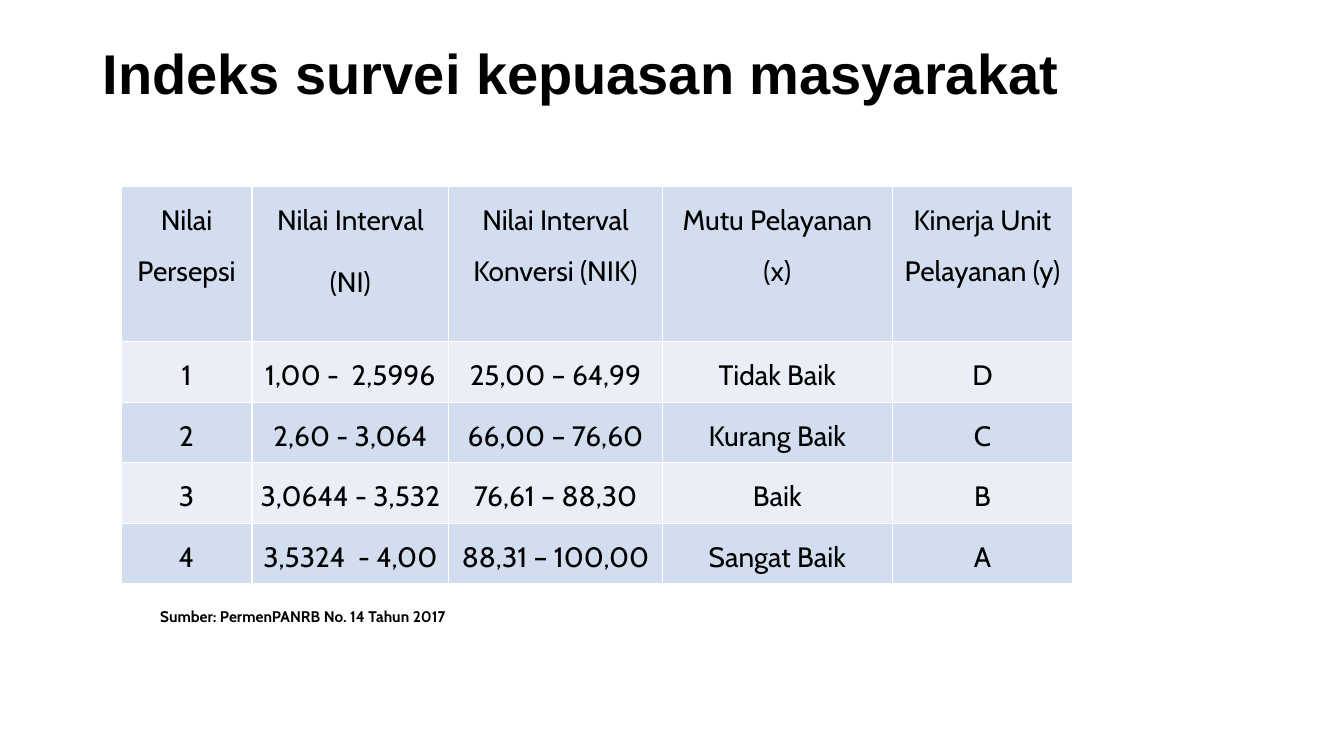
"""Build the slide with the public satisfaction survey index table."""
from lxml.etree import SubElement
from pptx import Presentation
from pptx.dml.color import RGBColor
from pptx.enum.text import MSO_ANCHOR, MSO_AUTO_SIZE, PP_ALIGN
from pptx.oxml.ns import qn
from pptx.util import Inches, Pt


def rgb(value):
    return RGBColor.from_string(value)


def write(tf, text, size, font="Cabin", bold=False, align=PP_ALIGN.LEFT, spacing=1.0, after=0):
    tf.word_wrap = True
    for i, line in enumerate(text.split("\n")):
        p = tf.paragraphs[0] if i == 0 else tf.add_paragraph()
        p.alignment, p.line_spacing = align, spacing
        p.space_before, p.space_after = Pt(0), Pt(after)
        r = p.add_run()
        r.text = line
        r.font.name, r.font.size, r.font.bold = font, Pt(size), bold
        r.font.color.rgb = rgb("000000")


prs = Presentation()
prs.slide_width, prs.slide_height = Inches(13.33), Inches(7.5)
s = prs.slides.add_slide(prs.slide_layouts[5])

title = s.shapes.title
title.left, title.top, title.width, title.height = map(Inches, (0.92, 0.4, 11.5, 1.45))
tf = title.text_frame
tf.vertical_anchor, tf.auto_size = MSO_ANCHOR.MIDDLE, MSO_AUTO_SIZE.NONE
write(tf, "Indeks survei kepuasan masyarakat", 40, font="Arial", bold=True, spacing=0.9)
tf.paragraphs[0].add_line_break()

rows = [
    ("Nilai Persepsi", "Nilai Interval\n(NI)", "Nilai Interval Konversi (NIK)",
     "Mutu Pelayanan (x)", "Kinerja Unit Pelayanan (y)"),
    ("1", "1,00 -  2,5996", "25,00 – 64,99", "Tidak Baik", "D"),
    ("2", "2,60 - 3,064", "66,00 – 76,60", "Kurang Baik", "C"),
    ("3", "3,0644 - 3,532", "76,61 – 88,30", "Baik", "B"),
    ("4", "3,5324  - 4,00", "88,31 – 100,00", "Sangat Baik", "A"),
]
col_widths = [1.3, 1.95, 2.12, 2.28, 1.79]
row_heights = [1.54] + [0.6] * 4
bands = ["D2DEEF", "EAEFF7"]

table = s.shapes.add_table(len(rows), len(col_widths), Inches(1.2), Inches(1.85),
                           Inches(sum(col_widths)), Inches(sum(row_heights))).table
for col, width in zip(table.columns, col_widths):
    col.width = Inches(width)
for row, height in zip(table.rows, row_heights):
    row.height = Inches(height)

for i, texts in enumerate(rows):
    for j, text in enumerate(texts):
        cell = table.cell(i, j)
        cell.margin_left = cell.margin_right = Inches(0.07)
        cell.margin_top = cell.margin_bottom = 0
        write(cell.text_frame, text, 20, align=PP_ALIGN.CENTER, spacing=1.5, after=8)
        tc_pr = cell._tc.get_or_add_tcPr()
        for side in ("a:lnL", "a:lnR", "a:lnT", "a:lnB"):
            ln = SubElement(tc_pr, qn(side), w=str(Pt(1)))
            SubElement(SubElement(ln, qn("a:solidFill")), qn("a:srgbClr"), val="FFFFFF")
        cell.fill.solid()
        cell.fill.fore_color.rgb = rgb(bands[i % 2])

source = s.shapes.add_textbox(Inches(1.49), Inches(5.97), Inches(6.69), Inches(0.29))
source.text_frame.auto_size = MSO_AUTO_SIZE.SHAPE_TO_FIT_TEXT
write(source.text_frame, "Sumber: PermenPANRB No. 14 Tahun 2017", 11, bold=True)

prs.save("out.pptx")
